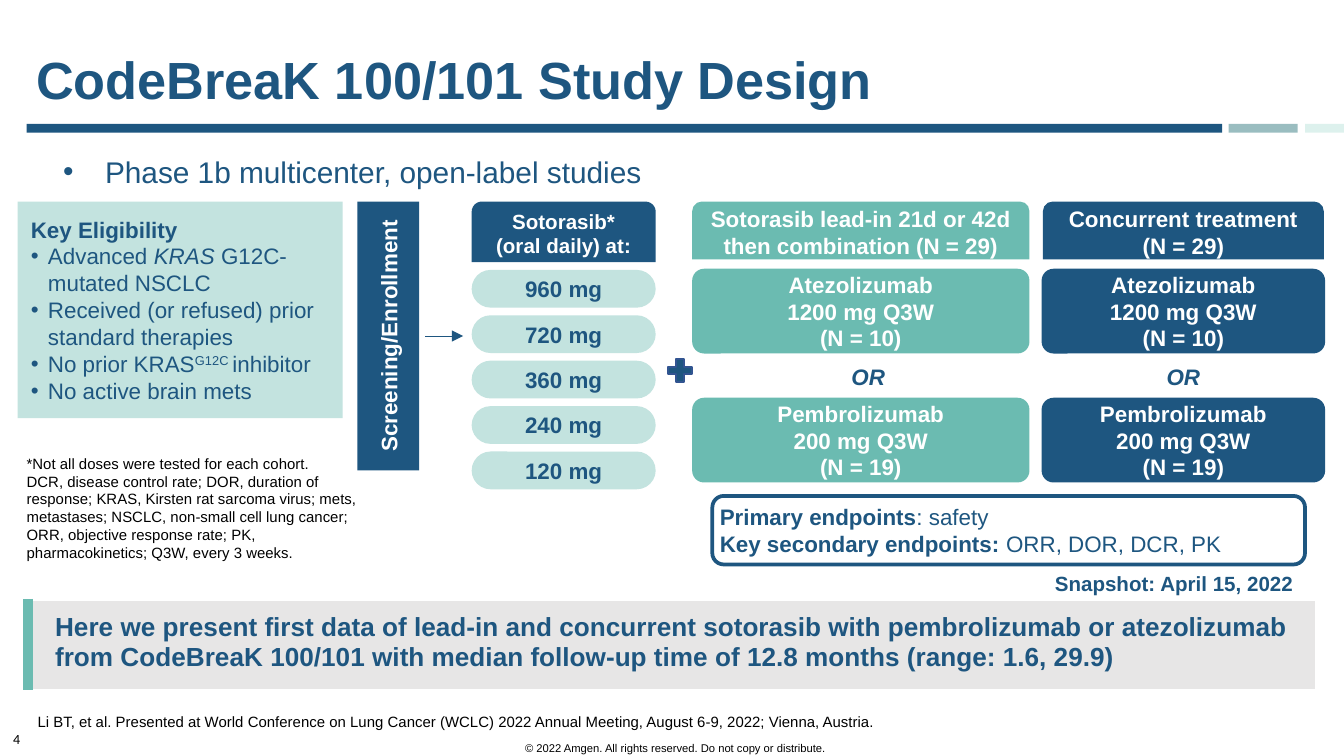
from dataclasses import dataclass

from lxml.etree import SubElement
from pptx import Presentation
from pptx.dml.color import RGBColor
from pptx.enum.shapes import MSO_CONNECTOR, MSO_SHAPE
from pptx.enum.text import MSO_ANCHOR, MSO_AUTO_SIZE, PP_ALIGN
from pptx.oxml.ns import qn
from pptx.util import Pt


@dataclass(frozen=True)
class Theme:
    font: str = "Arial"
    number_font: str = "Calibri"
    navy: str = "1E5680"
    teal: str = "6BBBB1"
    mint: str = "C3E3DF"
    grey: str = "E7E6E6"
    white: str = "FFFFFF"
    black: str = "000000"
    plus_edge: str = "325491"
    bars: tuple = (("1D5680", 100), ("377D83", 50), ("7BCBBA", 25))
    title: float = 28
    lead: float = 16
    banner: float = 14
    body: float = 12
    small: float = 11
    note: float = 8
    number: float = 7.5
    legal: float = 6


THEME = Theme()
PLAIN = {"bold": False}


def rgb(color):
    return RGBColor.from_string(color)


def set_bullet(paragraph, indent):
    props = paragraph._p.get_or_add_pPr()
    props.set("marL", str(Pt(indent)))
    props.set("indent", str(-Pt(indent)))
    SubElement(props, qn("a:buFont"), typeface=THEME.font)
    SubElement(props, qn("a:buChar"), char="•")


def write(frame, paragraphs, size=THEME.body, color=THEME.navy, bold=False, italic=False,
          font=THEME.font, align=PP_ALIGN.LEFT, anchor=MSO_ANCHOR.TOP, insets=(7.2, 3.6),
          bullet=0, bullets_from=0, line_spacing=None, space_after=0):
    """Each paragraph is a string or a list of (text, run format) pairs."""
    frame.word_wrap = True
    frame.auto_size = MSO_AUTO_SIZE.NONE
    frame.vertical_anchor = anchor
    frame.margin_left = frame.margin_right = Pt(insets[0])
    frame.margin_top = frame.margin_bottom = Pt(insets[1])
    for index, content in enumerate(paragraphs):
        paragraph = frame.add_paragraph() if index else frame.paragraphs[0]
        paragraph.alignment = align
        paragraph.space_before, paragraph.space_after = Pt(0), Pt(space_after)
        if line_spacing:
            paragraph.line_spacing = line_spacing
        if bullet and index >= bullets_from:
            set_bullet(paragraph, bullet)
        for text, extra in [(content, {})] if isinstance(content, str) else content:
            run = paragraph.add_run()
            run.text = text
            run.font.name, run.font.size = font, Pt(size)
            run.font.color.rgb = rgb(color)
            run.font.bold = extra.get("bold", bold)
            run.font.italic = extra.get("italic", italic)
            if "raised" in extra:
                run.font._element.set("baseline", "30000")


def add_label(slide, box, paragraphs, **style):
    label = slide.shapes.add_textbox(*map(Pt, box))
    write(label.text_frame, paragraphs, **style)


def add_block(slide, kind, box, fill, paragraphs=(), line=None, line_width=1, corner=None, **style):
    block = slide.shapes.add_shape(kind, *map(Pt, box))
    block.shadow.inherit = False
    block.fill.solid()
    block.fill.fore_color.rgb = rgb(fill)
    if line:
        block.line.color.rgb = rgb(line)
        block.line.width = Pt(line_width)
    else:
        block.line.fill.background()
    if corner is not None:
        block.adjustments[0] = corner
    centred = {"align": PP_ALIGN.CENTER, "anchor": MSO_ANCHOR.MIDDLE, "color": THEME.white, "bold": True}
    write(block.text_frame, paragraphs, **{**centred, **style})
    return block


def place(placeholder, box):
    placeholder.left, placeholder.top, placeholder.width, placeholder.height = map(Pt, box)
    return placeholder.text_frame


def add_heading(slide, box):
    left, top, width, _ = box
    title, lead = slide.placeholders[0], slide.placeholders[1]
    write(place(title, (left, top, width, 42)), ["CodeBreaK 100/101 Study Design"],
          size=THEME.title, bold=True, insets=(0, 3.6))
    write(place(lead, (left + 7.2, top + 56.9, 561.6, 26.6)),
          ["Phase 1b multicenter, open-label studies"], size=THEME.lead, bullet=22.5, space_after=6)
    # Three-part rule under the title
    for (color, opacity), (start, end) in zip(THEME.bars, ((14.2, 654.8), (658.2, 695.2), (699.1, 720))):
        bar = add_block(slide, MSO_SHAPE.RECTANGLE, (start, top + 44.8, end - start, 4.7), color)
        if opacity < 100:
            solid = bar._element.spPr.find(qn("a:solidFill"))
            SubElement(solid[0], qn("a:alpha"), val=str(opacity * 1000))


def add_eligibility(slide, box):
    criteria = [
        "Key Eligibility",
        [("Advanced ", PLAIN), ("KRAS", {"bold": False, "italic": True}), (" G12C-mutated NSCLC", PLAIN)],
        [("Received (or refused) prior standard therapies", PLAIN)],
        [("No prior KRAS", PLAIN), ("G12C ", {"bold": False, "raised": True}), ("inhibitor", PLAIN)],
        [("No active brain mets", PLAIN)],
    ]
    add_block(slide, MSO_SHAPE.RECTANGLE, box, THEME.mint, criteria, color=THEME.navy,
              align=PP_ALIGN.LEFT, bullet=9.2, bullets_from=1)


def add_screening(slide, box):
    left, top, width, height = box
    turned = (left + (width - height) / 2, top + (height - width) / 2, height, width)
    add_block(slide, MSO_SHAPE.RECTANGLE, turned, THEME.navy, ["Screening/Enrollment"]).rotation = 270
    arrow_y = top + height / 2
    arrow = slide.shapes.add_connector(MSO_CONNECTOR.STRAIGHT, Pt(left + width + 3.3), Pt(arrow_y),
                                       Pt(left + width + 23.5), Pt(arrow_y))
    arrow.line.color.rgb = rgb(THEME.navy)
    arrow.line.width = Pt(0.5)
    props = arrow._element.spPr
    SubElement(props.find(qn("a:ln")), qn("a:tailEnd"), type="triangle")
    SubElement(props, qn("a:effectLst"))


def add_doses(slide, box):
    left, top, width, height = box
    header, gap, pill = 32.4, 4.2, 20.2
    add_block(slide, MSO_SHAPE.ROUND_2_SAME_RECTANGLE, (left, top, width, header), THEME.navy,
              ["Sotorasib*", "(oral daily) at:"], size=THEME.small)
    doses = (960, 720, 360, 240, 120)
    first = top + header + gap
    pitch = (top + height - pill - first) / (len(doses) - 1)
    for row, dose in enumerate(doses):
        add_block(slide, MSO_SHAPE.ROUNDED_RECTANGLE, (left, first + row * pitch, width, pill),
                  THEME.mint, [f"{dose} mg"], color=THEME.navy, corner=0.5)


def add_arm(slide, box, heading, fill, header_inset=0, or_shift=0):
    left, top, width, height = box
    cohort = 45.4
    add_block(slide, MSO_SHAPE.ROUND_2_SAME_RECTANGLE,
              (left + header_inset, top, width - 2 * header_inset, 31), fill, [heading])
    cohorts = ((top + 36, "Atezolizumab", 1200, 10), (top + height - cohort, "Pembrolizumab", 200, 19))
    for y, drug, dose, count in cohorts:
        add_block(slide, MSO_SHAPE.ROUNDED_RECTANGLE, (left, y, width, cohort), fill,
                  [drug, f"{dose} mg Q3W", f"(N = {count})"], corner=0.14)
    add_label(slide, (left + width / 2 - 22.3 + or_shift, top + 82.8, 44.6, 21.6), ["OR"],
              bold=True, italic=True, align=PP_ALIGN.CENTER, insets=(5, 3.6))


def add_endpoints(slide, box):
    left, top, width, height = box
    add_block(slide, MSO_SHAPE.ROUNDED_RECTANGLE, box, THEME.white,
              [[("Primary endpoints", {}), (": safety", PLAIN)],
               [("Key secondary endpoints: ", {}), ("ORR, DOR, DCR, PK", PLAIN)]],
              line=THEME.navy, line_width=2, color=THEME.navy, align=PP_ALIGN.LEFT,
              anchor=MSO_ANCHOR.TOP, insets=(2.2, 2.2))
    add_label(slide, (left + 176.4, top + height, 148, 20.9), ["Snapshot: April 15, 2022"],
              size=THEME.small, bold=True)


def add_banner(slide, box):
    table = slide.shapes.add_table(1, 1, *map(Pt, box)).table
    table.first_row = table.horz_banding = False
    cell = table.cell(0, 0)
    cell.fill.solid()
    cell.fill.fore_color.rgb = rgb(THEME.grey)
    write(cell.text_frame, ["Here we present first data of lead-in and concurrent sotorasib with pembrolizumab "
                            "or atezolizumab from CodeBreaK 100/101 with median follow-up time of 12.8 months "
                            "(range: 1.6, 29.9)"], size=THEME.banner, bold=True)
    cell.margin_left = cell.margin_right = Pt(14.4)
    cell.margin_top = cell.margin_bottom = Pt(7.2)
    # Accent border on the left edge
    props = cell._tc.get_or_add_tcPr()
    edge = SubElement(props, qn("a:lnL"), w=str(Pt(6)))
    SubElement(SubElement(edge, qn("a:solidFill")), qn("a:srgbClr"), val=THEME.teal)
    props.insert(0, edge)


def add_notes_and_footer(slide, box):
    left, top, _, _ = box
    note = {"size": THEME.note, "color": THEME.black}
    add_label(slide, (left + 7.2, top, 192.2, 65.5),
              ["*Not all doses were tested for each cohort.",
               "DCR, disease control rate; DOR, duration of response; KRAS, Kirsten rat sarcoma virus; mets, "
               "metastases; NSCLC, non-small cell lung cancer; ORR, objective response rate; PK, "
               "pharmacokinetics; Q3W, every 3 weeks."], **note)
    add_label(slide, (left + 15.1, top + 138.2, 476.6, 22),
              ["Li BT, et al. Presented at World Conference on Lung Cancer (WCLC) 2022 Annual Meeting, "
               "August 6-9, 2022; Vienna, Austria."], line_spacing=0.9, insets=(5, 5), **note)
    add_label(slide, (left, top + 148.3, 36, 16.6), ["4"], size=THEME.number,
              color=THEME.black, font=THEME.number_font)
    add_label(slide, (left + 161.3, top + 154.8, 401, 13.7),
              ["© 2022 Amgen. All rights reserved. Do not copy or distribute."], size=THEME.legal,
              color=THEME.black, align=PP_ALIGN.CENTER, line_spacing=0.9)


def main():
    deck = Presentation()
    deck.slide_width, deck.slide_height = Pt(720), Pt(405)
    slide = deck.slides.add_slide(deck.slide_layouts[1])
    top = 108
    add_heading(slide, (19.4, 21.6, 690, 84))
    add_eligibility(slide, (9.4, top, 174.2, 116))
    add_screening(slide, (191.5, top, 33.1, 144))
    add_doses(slide, (252.7, top, 98.6, 154.1))
    add_block(slide, MSO_SHAPE.MATH_PLUS, (355.7, 190.1, 17.3, 16.6), THEME.navy, line=THEME.plus_edge)
    add_arm(slide, (370.8, top, 180.7, 150.5), "Sotorasib lead-in 21d or 42d then combination (N = 29)",
            THEME.teal, or_shift=4)
    add_arm(slide, (558, top, 151.9, 150.5), "Concurrent treatment (N = 29)", THEME.navy, header_inset=0.7)
    add_endpoints(slide, (381.6, 265.7, 317.5, 36.7))
    add_banner(slide, (15.1, 321.3, 689.8, 48.2))
    add_notes_and_footer(slide, (0, 239.8, 720, 165))
    deck.save("out.pptx")


if __name__ == "__main__":
    main()
